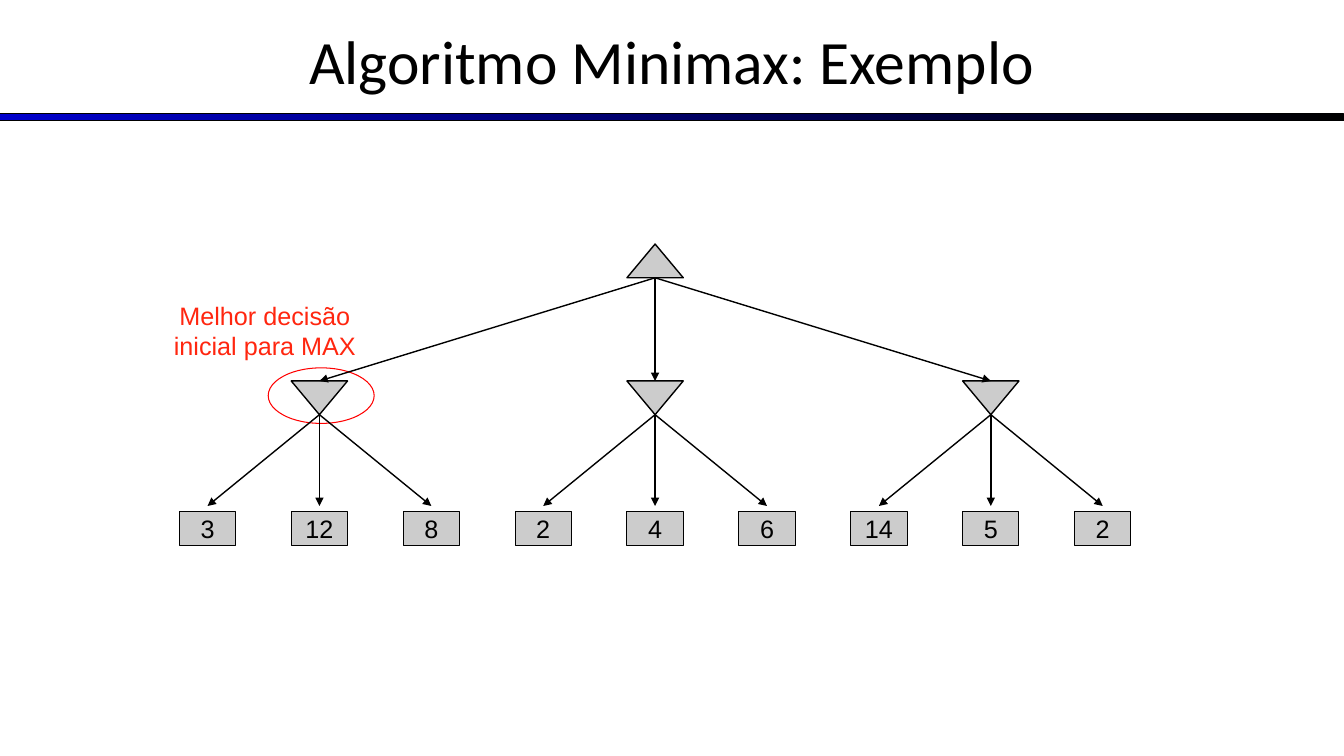
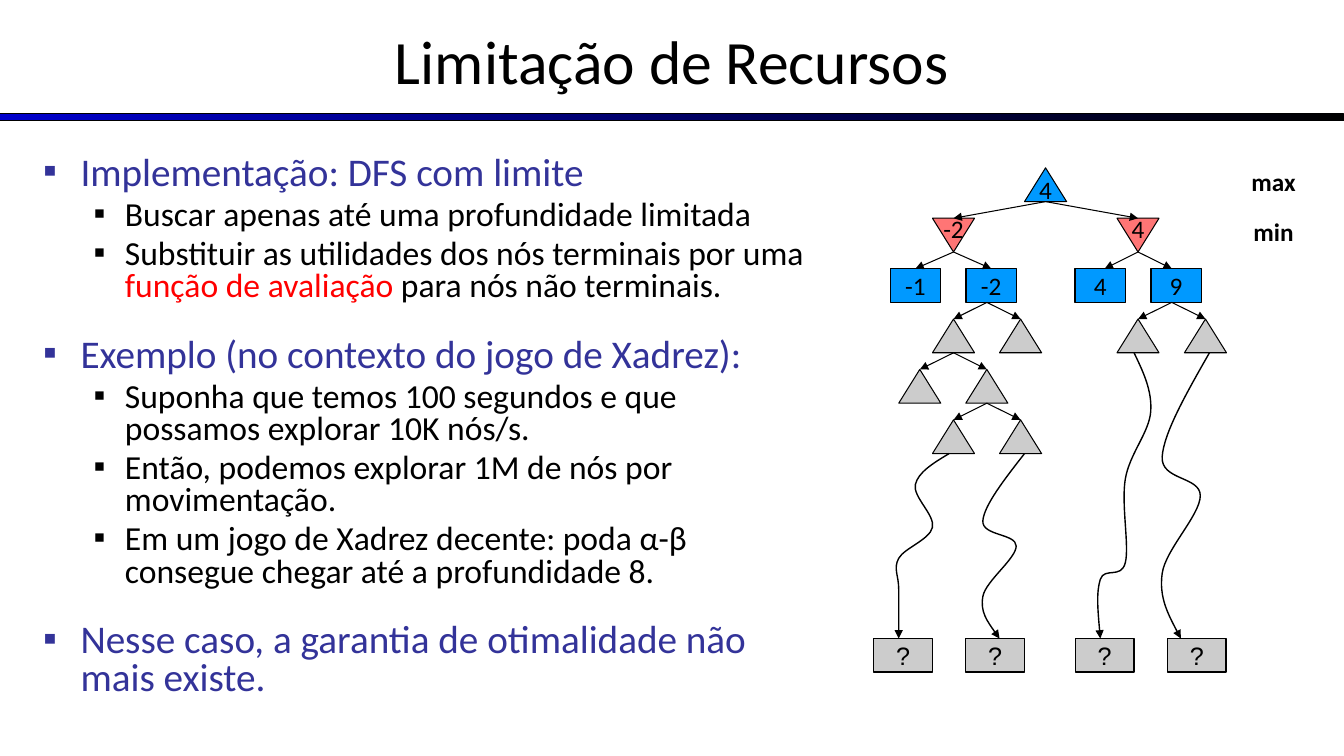
from lxml.etree import SubElement
from pptx import Presentation
from pptx.dml.color import RGBColor as Rgb
from pptx.enum.shapes import MSO_CONNECTOR as Link, MSO_SHAPE as Kind
from pptx.enum.text import MSO_ANCHOR as Anchor, PP_ALIGN as Align
from pptx.oxml.ns import qn
from pptx.util import Cm, Pt

COLORS = {"black": "000000", "blue": "0000CC", "gray": "CCCCCC", "indigo": "333399",
          "red": "FF0000", "note": "FF260F", "max": "0099FF", "min": "FF7575"}
TITLE = {"name": "Calibri", "size": Pt(44)}
HEADING = {"name": "Calibri", "size": Pt(28)}
DETAIL = {"name": "Calibri", "size": Pt(24)}
VALUE = {"name": "Calibri", "size": Pt(18)}
LABEL = {"name": "Calibri", "size": Pt(18), "bold": True}
PLAIN = {"name": "Arial", "size": Pt(18)}
NODE_HEIGHT = 0.85


def write(para, text, font_format, color="black"):
    span = para.add_run()
    span.text = text
    for name, value in font_format.items():
        setattr(span.font, name, value)
    span.font.color.rgb = Rgb.from_string(COLORS[color])


def add_node(page, kind, center, top, width, fill="gray", weight=0.75, text="", font_format=PLAIN):
    node = page.shapes.add_shape(kind, Cm(center - width / 2), Cm(top), Cm(width), Cm(NODE_HEIGHT))
    node.shadow.inherit = False
    node.fill.solid()
    node.fill.fore_color.rgb = Rgb.from_string(COLORS[fill])
    node.line.color.rgb = Rgb.from_string(COLORS["black"])
    node.line.width = Pt(weight)
    if text:
        frame = node.text_frame
        frame.word_wrap = False
        frame.vertical_anchor = Anchor.MIDDLE
        frame.margin_top = Cm(0.1 if kind == Kind.FLOWCHART_MERGE else 0)
        frame.margin_bottom = Cm(0.2 if kind == Kind.ISOSCELES_TRIANGLE else 0)
        frame.paragraphs[0].alignment = Align.CENTER
        write(frame.paragraphs[0], text, font_format)


deck = Presentation()
deck.slide_width, deck.slide_height = Cm(33.87), Cm(19.05)
layout = deck.slide_layouts[5]

# Titles
pages = []
for heading in ("Algoritmo Minimax: Exemplo", "Limitação de Recursos"):
    page = deck.slides.add_slide(layout)
    title = page.shapes.title
    title.left, title.top, title.width, title.height = Cm(0), Cm(-0.08), Cm(33.87), Cm(3.18)
    title.text_frame.vertical_anchor = Anchor.MIDDLE
    title.text_frame.paragraphs[0].alignment = Align.CENTER
    write(title.text_frame.paragraphs[0], heading, TITLE)
    pages.append(page)
example, limits = pages

# Gradient band, moved into the shared layout
band = example.shapes.add_shape(Kind.RECTANGLE, Cm(0), Cm(2.87), Cm(33.87), Cm(0.18))
band.shadow.inherit = False
band.fill.gradient()
band.fill.gradient_angle = 0
for stop, color in zip(band.fill.gradient_stops, ("blue", "black")):
    stop.color.rgb = Rgb.from_string(COLORS[color])
band.line.color.rgb = Rgb.from_string(COLORS["black"])
band.line.width = Pt(0.75)
band.element.nvSpPr.cNvPr.id = 20
layout.shapes.element.insert(2, band.element)

# Minimax tree: one max node, three min nodes, nine leaves
arrows = []  # page, start x, start y, end x, end y, weight
centers = [5.23 + 2.82 * i for i in range(9)]
root = centers[4]
add_node(example, Kind.ISOSCELES_TRIANGLE, root, 6.15, 1.42, weight=1)
for parent in centers[1::3]:
    add_node(example, Kind.FLOWCHART_MERGE, parent, 9.6, 1.42, weight=1)
    arrows.append((example, root, 7, parent, 9.6, 1))
for i, (center, value) in enumerate(zip(centers, (3, 12, 8, 2, 4, 6, 14, 5, 2))):
    add_node(example, Kind.RECTANGLE, center, 12.9, 1.42, text=str(value))
    arrows.append((example, centers[i // 3 * 3 + 1], 10.45, center, 12.75, 1))

# Ring around the best choice
ring = example.shapes.add_shape(Kind.OVAL, Cm(6.76), Cm(9.27), Cm(2.67), Cm(1.4))
ring.shadow.inherit = False
ring.fill.background()
ring.line.color.rgb = Rgb.from_string(COLORS["red"])
ring.line.width = Pt(0.75)

# Bulleted text: level, space before, coloured pieces
bullets = [
    (0, 5.6, [("Implementação: DFS com limite", "indigo")]),
    (1, 4.8, [("Buscar apenas até uma profundidade limitada", "black")]),
    (1, 4.8, [("Substituir as utilidades dos nós terminais por uma ", "black"),
              ("função de avaliação", "red"), (" para nós não terminais.", "black")]),
    (0, 24.4, [("Exemplo (no contexto do jogo de Xadrez):", "indigo")]),
    (1, 4.8, [("Suponha que temos 100 segundos e que possamos explorar 10K nós/s.", "black")]),
    (1, 4.8, [("Então, podemos explorar 1M de nós por movimentação.", "black")]),
    (1, 4.8, [("Em um jogo de Xadrez decente: poda α-β consegue chegar até a profundidade 8.",
               "black")]),
    (0, 24.4, [("Nesse caso, a garantia de otimalidade não mais existe.", "indigo")]),
]
body = limits.shapes.add_textbox(Cm(0.84), Cm(3.81), Cm(19.8), Cm(12.57)).text_frame
body.word_wrap = True
for i, (level, gap, pieces) in enumerate(bullets):
    para = body.add_paragraph() if i else body.paragraphs[0]
    para.level = level
    para.line_spacing = 0.8
    para.space_before = Pt(gap)
    margin, hanging = ((0.94, 0.94), (2.06, 0.79))[level]
    props = para._p.get_or_add_pPr()
    props.set("marL", str(Cm(margin)))
    props.set("indent", str(-Cm(hanging)))
    SubElement(SubElement(props, qn("a:buClr")), qn("a:srgbClr")).set("val", COLORS[pieces[0][1]])
    SubElement(props, qn("a:buFont")).set("typeface", "Arial")
    SubElement(props, qn("a:buChar")).set("char", "▪")
    for text, color in pieces:
        write(para, text, (HEADING, DETAIL)[level], color)

# Depth-limited tree, with levels at equal steps
level_tops = [4.23 + 1.27 * level for level in range(6)]
add_node(limits, Kind.ISOSCELES_TRIANGLE, 26.35, level_tops[0], 1.06, "max", 0.75, "4", VALUE)
for center, value in ((24.03, "-2"), (28.68, "4")):
    add_node(limits, Kind.FLOWCHART_MERGE, center, level_tops[1], 1.06, "min", 0.75, value, VALUE)
for center, value in ((23.07, "-1"), (24.98, "-2"), (27.73, "4"), (29.64, "9")):
    add_node(limits, Kind.RECTANGLE, center, level_tops[2], 1.27, "max", 1, value, VALUE)
branches = [  # parent level, parent centre, child centres
    (0, 26.35, (24.03, 28.68)),
    (1, 24.03, (23.07, 24.98)), (1, 28.68, (27.84, 29.53)),
    (2, 24.87, (24.03, 25.72)), (2, 29.53, (28.68, 30.38)),
    (3, 24.03, (23.18, 24.87)),
    (4, 24.87, (24.03, 25.72)),
]
for level, parent, children in branches:
    for child in children:
        if level >= 2:
            add_node(limits, Kind.ISOSCELES_TRIANGLE, child, level_tops[level + 1], 1.06)
        arrows.append((limits, parent, level_tops[level] + NODE_HEIGHT,
                       child, level_tops[level + 1], 0.75))
for center in (22.76, 25.08, 27.84, 30.16):
    add_node(limits, Kind.RECTANGLE, center, 16.09, 1.48, weight=1, text="?")

# Smooth curves through knots, down to the unknown leaves
curves = [
    [(23.92, 11.43), (23.07, 12.21), (23.5, 13.29), (22.65, 14.07), (22.65, 14.84), (22.65, 16.09)],
    [(25.82, 11.43), (24.77, 13.12), (25.61, 13.76), (24.77, 15.03), (25.19, 16.09)],
    [(28.58, 8.89), (29, 10.37), (28.36, 12.07), (28.36, 14.18), (27.73, 14.6), (27.73, 16.09)],
    [(30.48, 8.89), (29.29, 11.51), (30.25, 12.49), (29.29, 14.45), (29.76, 16.09)],
]
lines = []
for knots in curves:
    last = len(knots) - 1
    tangents = [((c[0] - a[0]) / 6, (c[1] - a[1]) / 6) for a, c in zip(knots, knots[2:])]
    points = []
    for i in range(last):
        start, end = knots[i], knots[i + 1]
        leave = arrive = None
        if i > 0:
            leave = [k + t for k, t in zip(start, tangents[i - 1])]
        if i + 1 < last:
            arrive = [k - t for k, t in zip(end, tangents[i])]
        leave = leave or [(k + c) / 2 for k, c in zip(start, arrive)]
        arrive = arrive or [(k + c) / 2 for k, c in zip(end, leave)]
        points += [leave, arrive, end]
    builder = limits.shapes.build_freeform(Cm(knots[0][0]), Cm(knots[0][1]))
    builder.add_line_segments([(Cm(x), Cm(y)) for x, y in points], close=False)
    curve = builder.convert_to_shape()
    curve.fill.background()
    segments = curve.element.xpath(".//a:lnTo")
    for first, *others in zip(segments[::3], segments[1::3], segments[2::3]):
        first.tag = qn("a:cubicBezTo")
        for other in others:
            first.append(other[0])
            other.getparent().remove(other)
    lines.append((curve, 1))

# Straight arrows, then one line style for all
for page, x1, y1, x2, y2, weight in arrows:
    arrow = page.shapes.add_connector(Link.STRAIGHT, Cm(x1), Cm(y1), Cm(x2), Cm(y2))
    lines.append((arrow, weight))
for line, weight in lines:
    line.line.color.rgb = Rgb.from_string(COLORS["black"])
    line.line.width = Pt(weight)
    props = line.element.spPr
    SubElement(props.find(qn("a:ln")), qn("a:tailEnd")).set("type", "triangle")
    SubElement(props, qn("a:effectLst"))

# Labels
labels = [
    (example, 4.01, 7.42, 5.33, 1.8, ["Melhor decisão", "inicial para MAX"], PLAIN, "note"),
    (limits, 31.17, 4.06, 1.85, 1.02, ["max"], LABEL, "black"),
    (limits, 31.17, 5.33, 1.85, 1.02, ["min"], LABEL, "black"),
]
for page, left, top, width, height, texts, font_format, color in labels:
    box = page.shapes.add_textbox(Cm(left), Cm(top), Cm(width), Cm(height))
    frame = box.text_frame
    frame.word_wrap = True
    frame.vertical_anchor = Anchor.MIDDLE
    for i, text in enumerate(texts):
        para = frame.add_paragraph() if i else frame.paragraphs[0]
        para.alignment = Align.CENTER
        write(para, text, font_format, color)

deck.save("out.pptx")
